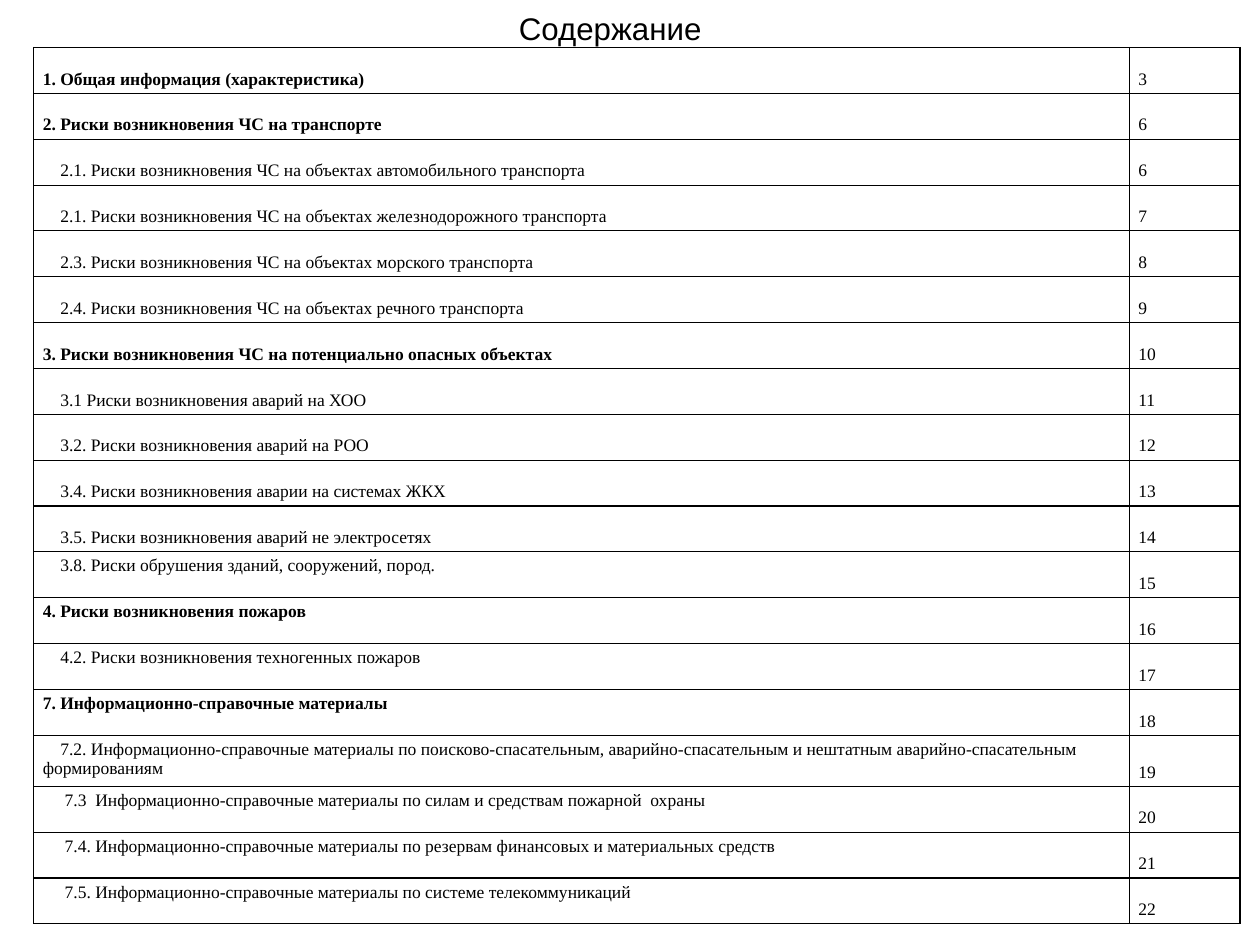
from lxml.etree import SubElement
from pptx import Presentation
from pptx.dml.color import RGBColor
from pptx.enum.text import MSO_ANCHOR, MSO_AUTO_SIZE, PP_ALIGN
from pptx.oxml.ns import qn
from pptx.util import Pt

BLACK = RGBColor(0x00, 0x00, 0x00)
TITLE_FONT = "Arial"
TABLE_FONT = "Times New Roman"
SECTION, ITEM, DEEP_ITEM = 0, 14, 17.5
BOTTOM, TOP = MSO_ANCHOR.BOTTOM, MSO_ANCHOR.TOP
PAGE_COLUMN_WIDTH = 88.5

CONTENTS = [
    (SECTION, BOTTOM, "1. Общая информация (характеристика)", "3"),
    (SECTION, BOTTOM, "2. Риски возникновения ЧС на транспорте", "6"),
    (ITEM, BOTTOM, "2.1. Риски возникновения ЧС на объектах автомобильного транспорта", "6"),
    (ITEM, BOTTOM, "2.1. Риски возникновения ЧС на объектах железнодорожного транспорта", "7"),
    (ITEM, BOTTOM, "2.3. Риски возникновения ЧС на объектах морского транспорта", "8"),
    (ITEM, BOTTOM, "2.4. Риски возникновения ЧС на объектах речного транспорта", "9"),
    (SECTION, BOTTOM, "3. Риски возникновения ЧС на потенциально опасных объектах", "10"),
    (ITEM, BOTTOM, "3.1 Риски возникновения аварий на ХОО", "11"),
    (ITEM, BOTTOM, "3.2. Риски возникновения аварий на РОО", "12"),
    (ITEM, BOTTOM, "3.4. Риски возникновения аварии на системах ЖКХ", "13"),
    (ITEM, BOTTOM, "3.5. Риски возникновения аварий не электросетях", "14"),
    (ITEM, TOP, "3.8. Риски обрушения зданий, сооружений, пород.", "15"),
    (SECTION, TOP, "4. Риски возникновения пожаров", "16"),
    (ITEM, TOP, "4.2. Риски возникновения техногенных пожаров", "17"),
    (SECTION, TOP, "7. Информационно-справочные материалы", "18"),
    (ITEM, TOP, "7.2. Информационно-справочные материалы по поисково-спасательным, "
     "аварийно-спасательным и нештатным аварийно-спасательным формированиям", "19"),
    (DEEP_ITEM, TOP, "7.3  Информационно-справочные материалы по силам и средствам пожарной  охраны", "20"),
    (DEEP_ITEM, TOP, "7.4. Информационно-справочные материалы по резервам финансовых и материальных средств", "21"),
    (DEEP_ITEM, TOP, "7.5. Информационно-справочные материалы по системе телекоммуникаций", "22"),
]


def add_run(paragraph, text, font_name, size, bold=False):
    run = paragraph.add_run()
    run.text = text
    run.font.name = font_name
    run.font.size = Pt(size)
    run.font.bold = bold
    run.font.color.rgb = BLACK


def add_borders(cell):
    properties = cell._tc.get_or_add_tcPr()
    for side in ("a:lnL", "a:lnR", "a:lnT", "a:lnB"):
        line = SubElement(properties, qn(side), w=str(Pt(1)))
        fill = SubElement(line, qn("a:solidFill"))
        SubElement(fill, qn("a:srgbClr"), val=str(BLACK))


def fill_cell(cell, text, anchor, bold=False, indent=0):
    add_borders(cell)
    cell.fill.background()
    cell.vertical_anchor = anchor
    cell.margin_left = cell.margin_right = Pt(7.2)
    cell.margin_top = cell.margin_bottom = Pt(3.6)
    paragraph = cell.text_frame.paragraphs[0]
    if indent:
        properties = paragraph._p.get_or_add_pPr()
        properties.set("marL", "0")
        properties.set("indent", str(Pt(indent)))
    add_run(paragraph, text, TABLE_FONT, 14, bold)


def add_title(slide, left, top, width, height):
    shape = slide.shapes.add_textbox(Pt(left), Pt(top), Pt(width), Pt(height))
    frame = shape.text_frame
    frame.word_wrap = False
    frame.auto_size = MSO_AUTO_SIZE.SHAPE_TO_FIT_TEXT
    paragraph = frame.paragraphs[0]
    paragraph.alignment = PP_ALIGN.CENTER
    add_run(paragraph, "Содержание", TITLE_FONT, 25)


def add_contents(slide, left, top, width, height):
    shape = slide.shapes.add_table(len(CONTENTS), 2, Pt(left), Pt(top), Pt(width), Pt(height))
    table = shape.table
    table.first_row = False
    table.horz_banding = False
    table.columns[0].width = Pt(width - PAGE_COLUMN_WIDTH)
    table.columns[1].width = Pt(PAGE_COLUMN_WIDTH)
    for row, (indent, anchor, heading, page) in enumerate(CONTENTS):
        fill_cell(table.cell(row, 0), heading, anchor, indent == SECTION, indent)
        fill_cell(table.cell(row, 1), page, BOTTOM)


def main():
    presentation = Presentation()
    presentation.slide_width = Pt(1008)
    presentation.slide_height = Pt(756)
    slide = presentation.slides.add_slide(presentation.slide_layouts[6])
    add_title(slide, 407.5, 3.6, 161.3, 37.4)
    add_contents(slide, 27, 38, 965, 697)
    presentation.save("out.pptx")


if __name__ == "__main__":
    main()
